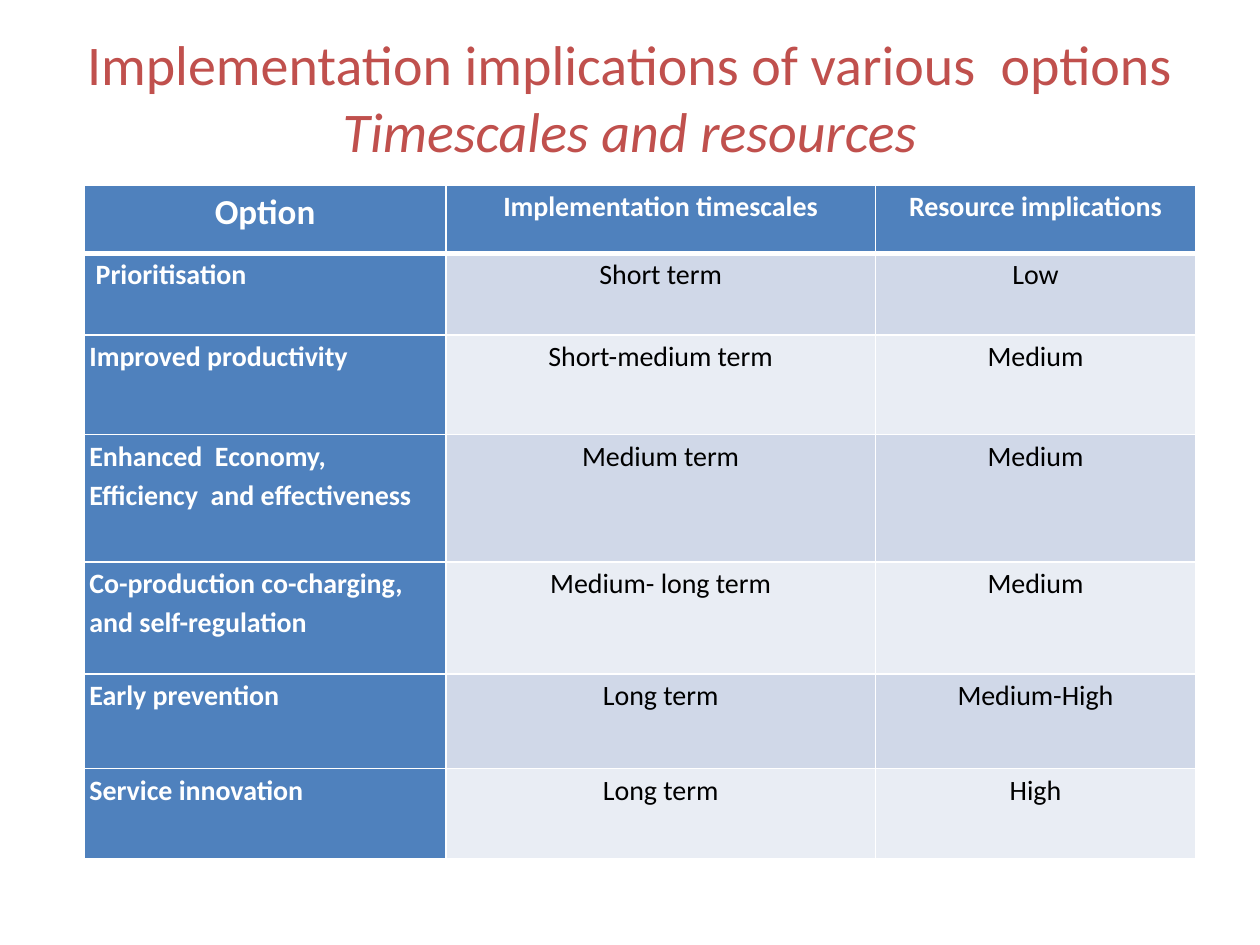
from lxml.etree import SubElement
from pptx import Presentation
from pptx.dml.color import RGBColor
from pptx.enum.text import MSO_ANCHOR, PP_ALIGN
from pptx.oxml.ns import qn
from pptx.util import Pt

WHITE = RGBColor(0xFF, 0xFF, 0xFF)
BLACK = RGBColor(0, 0, 0)
RED = RGBColor(0xC0, 0x50, 0x4D)
BLUE = RGBColor(0x4F, 0x81, 0xBD)
BANDS = [RGBColor(0xD0, 0xD8, 0xE8), RGBColor(0xE9, 0xED, 0xF4)]
FONT = "Calibri"

TITLE = "Implementation implications of various  options"
SUBTITLE = "Timescales and resources"
ROWS = [
    ("Option", "Implementation timescales", "Resource implications"),
    (" Prioritisation", "Short term", "Low"),
    ("Improved productivity", "Short-medium term", "Medium"),
    ("Enhanced  Economy, Efficiency  and effectiveness", "Medium term", "Medium"),
    ("Co-production co-charging, and self-regulation", "Medium- long term", "Medium"),
    ("Early prevention", "Long term", "Medium-High"),
    ("Service innovation", "Long term", "High"),
]
COL_WIDTHS = [206.6, 245.5, 182.9]
ROW_HEIGHTS = [38.9, 46.8, 56.9, 72.7, 64.1, 54, 51.8]
TABLE_LEFT, TABLE_TOP = 48.2, 105.8


def add_text(p, text, size=16, color=BLACK, bold=False, italic=False,
             align=PP_ALIGN.CENTER, spacing=None):
    p.alignment = align
    if spacing:
        p.line_spacing = spacing
    r = p.add_run()
    r.text = text
    f = r.font
    f.name, f.size, f.bold, f.italic = FONT, Pt(size), bold, italic
    f.color.rgb = color


def set_borders(cell, **widths):
    """Draw white cell borders; widths in points by side L, R, T, B."""
    tc_pr = cell._tc.get_or_add_tcPr()
    for side, width in widths.items():
        ln = SubElement(tc_pr, qn(f"a:ln{side}"), w=str(Pt(width)))
        fill = SubElement(ln, qn("a:solidFill"))
        SubElement(fill, qn("a:srgbClr"), val=str(WHITE))


def add_title(slide):
    tf = slide.shapes.add_textbox(Pt(36), Pt(21.6), Pt(648), Pt(67)).text_frame
    tf.word_wrap = True
    tf.vertical_anchor = MSO_ANCHOR.MIDDLE
    p = tf.paragraphs[0]
    add_text(p, TITLE, size=32, color=RED)
    p.add_line_break()
    add_text(p, SUBTITLE, size=32, color=RED, italic=True)


def add_options_table(slide):
    table = slide.shapes.add_table(
        len(ROWS), len(COL_WIDTHS), Pt(TABLE_LEFT), Pt(TABLE_TOP),
        Pt(sum(COL_WIDTHS)), Pt(sum(ROW_HEIGHTS))).table
    for col, width in zip(table.columns, COL_WIDTHS):
        col.width = Pt(width)
    for row, height in zip(table.rows, ROW_HEIGHTS):
        row.height = Pt(height)

    for i, texts in enumerate(ROWS):
        for j, text in enumerate(texts):
            cell = table.cell(i, j)
            heading = i == 0 or j == 0
            cell.margin_left = cell.margin_right = Pt(2.9)
            cell.margin_top = cell.margin_bottom = 0
            set_borders(cell, L=1, R=1, T=3 if i == 1 else 1, B=3 if i == 0 else 1)
            cell.fill.solid()
            cell.fill.fore_color.rgb = BLUE if heading else BANDS[(i - 1) % 2]
            add_text(cell.text_frame.paragraphs[0], text,
                     size=20 if i == j == 0 else 16,
                     color=WHITE if heading else BLACK, bold=heading,
                     align=PP_ALIGN.LEFT if i and not j else PP_ALIGN.CENTER,
                     spacing=1.15)


prs = Presentation()
prs.slide_width, prs.slide_height = Pt(720), Pt(540)
slide = prs.slides.add_slide(prs.slide_layouts[6])
add_title(slide)
add_options_table(slide)
prs.save("out.pptx")
